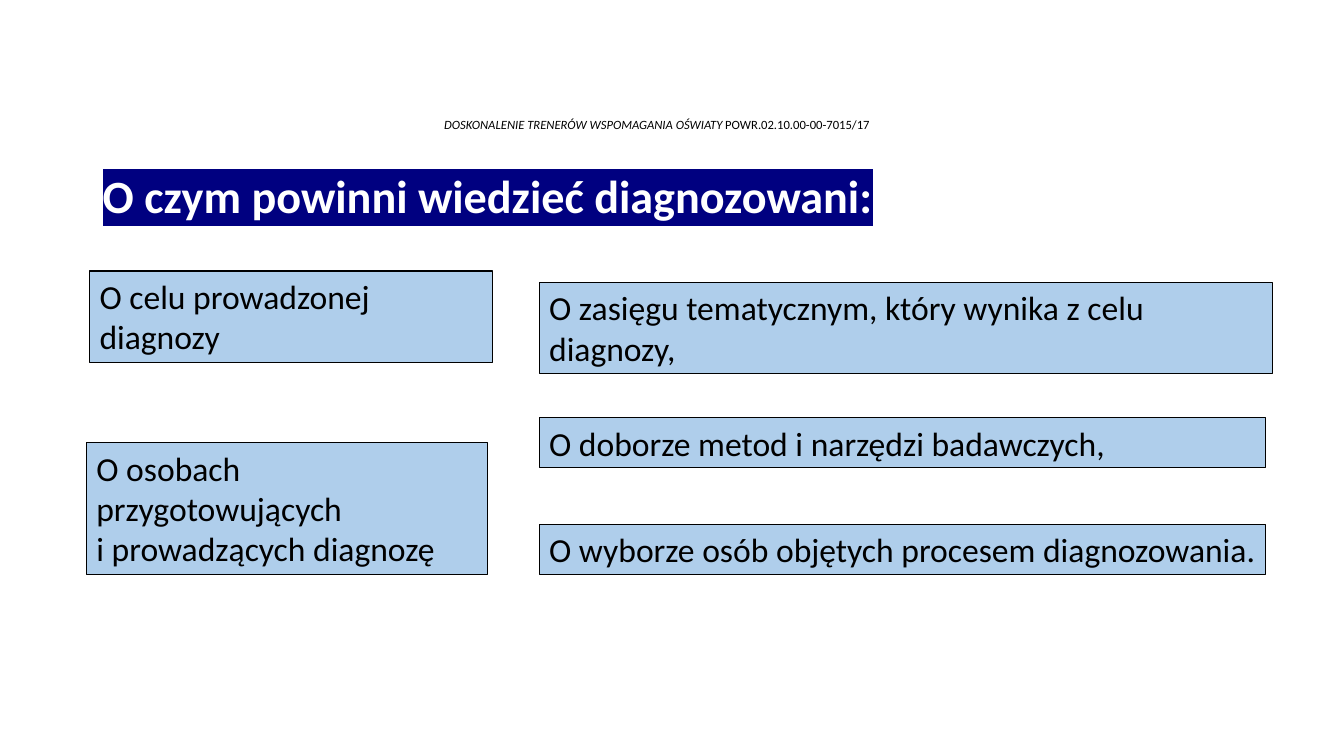
from lxml import etree
from pptx import Presentation
from pptx.dml.color import RGBColor
from pptx.enum.shapes import MSO_SHAPE
from pptx.enum.text import MSO_ANCHOR, MSO_AUTO_SIZE, PP_ALIGN
from pptx.oxml.ns import qn
from pptx.util import Cm, Pt

RECTANGLE = MSO_SHAPE.RECTANGLE
TOP, MIDDLE = MSO_ANCHOR.TOP, MSO_ANCHOR.MIDDLE
GROW = MSO_AUTO_SIZE.SHAPE_TO_FIT_TEXT
LEFT, CENTER = PP_ALIGN.LEFT, PP_ALIGN.CENTER
BLACK = RGBColor(0x00, 0x00, 0x00)
WHITE = RGBColor(0xFF, 0xFF, 0xFF)
NAVY = RGBColor(0x00, 0x00, 0x80)
LIGHT_BLUE = RGBColor(0xAF, 0xCE, 0xEB)
FONT = "Calibri"

TOPICS = [
    (2.26, 6.83, 10.16, 2.31, ["O celu prowadzonej diagnozy"]),
    (2.18, 11.15, 10.11, 3.33,
     ["O osobach przygotowujących", "i prowadzących diagnozę"]),
    (13.59, 10.52, 18.31, 1.27, ["O doborze metod i narzędzi badawczych,"]),
    (13.59, 7.11, 18.47, 2.31,
     ["O zasięgu tematycznym, który wynika z celu diagnozy,"]),
    (13.59, 13.21, 18.31, 1.27,
     ["O wyborze osób objętych procesem diagnozowania."]),
]


def add_run(paragraph, text, size, color=BLACK, bold=False, italic=False):
    """Append a formatted run and return it."""
    run = paragraph.add_run()
    run.text = text
    run.font.name = FONT
    run.font.size = Pt(size)
    run.font.bold = bold
    run.font.italic = italic
    run.font.color.rgb = color
    return run


def highlight(run, color):
    """Mark the run with a background colour."""
    mark = etree.Element(qn("a:highlight"))
    etree.SubElement(mark, qn("a:srgbClr"), val=str(color))
    run.font.fill._xPr.find(qn("a:solidFill")).addnext(mark)


def add_text_line(slide, left, top, width, height, alignment):
    """Add a wrapping text box and return its paragraph."""
    box = slide.shapes.add_textbox(Cm(left), Cm(top), Cm(width), Cm(height))
    box.text_frame.word_wrap = True
    box.text_frame.vertical_anchor = MIDDLE
    paragraph = box.text_frame.paragraphs[0]
    paragraph.alignment = alignment
    paragraph.line_spacing = 0.9
    return paragraph


def add_topic(slide, left, top, width, height, lines):
    """Add a light blue framed topic."""
    topic = slide.shapes.add_shape(
        RECTANGLE, Cm(left), Cm(top), Cm(width), Cm(height))
    topic.shadow.inherit = False
    topic.fill.solid()
    topic.fill.fore_color.rgb = LIGHT_BLUE
    topic.line.color.rgb = BLACK
    topic.line.width = Pt(0.75)
    frame = topic.text_frame
    frame.word_wrap = True
    frame.auto_size = GROW
    frame.vertical_anchor = TOP
    paragraph = frame.paragraphs[0]
    paragraph.alignment = LEFT
    for index, line in enumerate(lines):
        if index:
            paragraph.add_line_break()
        add_run(paragraph, line, 24)


def main():
    """Build and save the slide."""
    deck = Presentation()
    deck.slide_width, deck.slide_height = Cm(33.87), Cm(19.05)
    slide = deck.slides.add_slide(deck.slide_layouts[6])

    project = add_text_line(slide, 2, 2.85, 29.11, 0.6, CENTER)
    add_run(project, "DOSKONALENIE TRENERÓW WSPOMAGANIA OŚWIATY ", 9, italic=True)
    add_run(project, "POWR.02.10.00-00-7015/17", 9)

    heading = add_text_line(slide, 2.34, 3.71, 29.21, 2.57, LEFT)
    question = add_run(
        heading, "O czym powinni wiedzieć diagnozowani:", 33, WHITE, bold=True)
    highlight(question, NAVY)

    for topic in TOPICS:
        add_topic(slide, *topic)
    deck.save("out.pptx")


if __name__ == "__main__":
    main()
